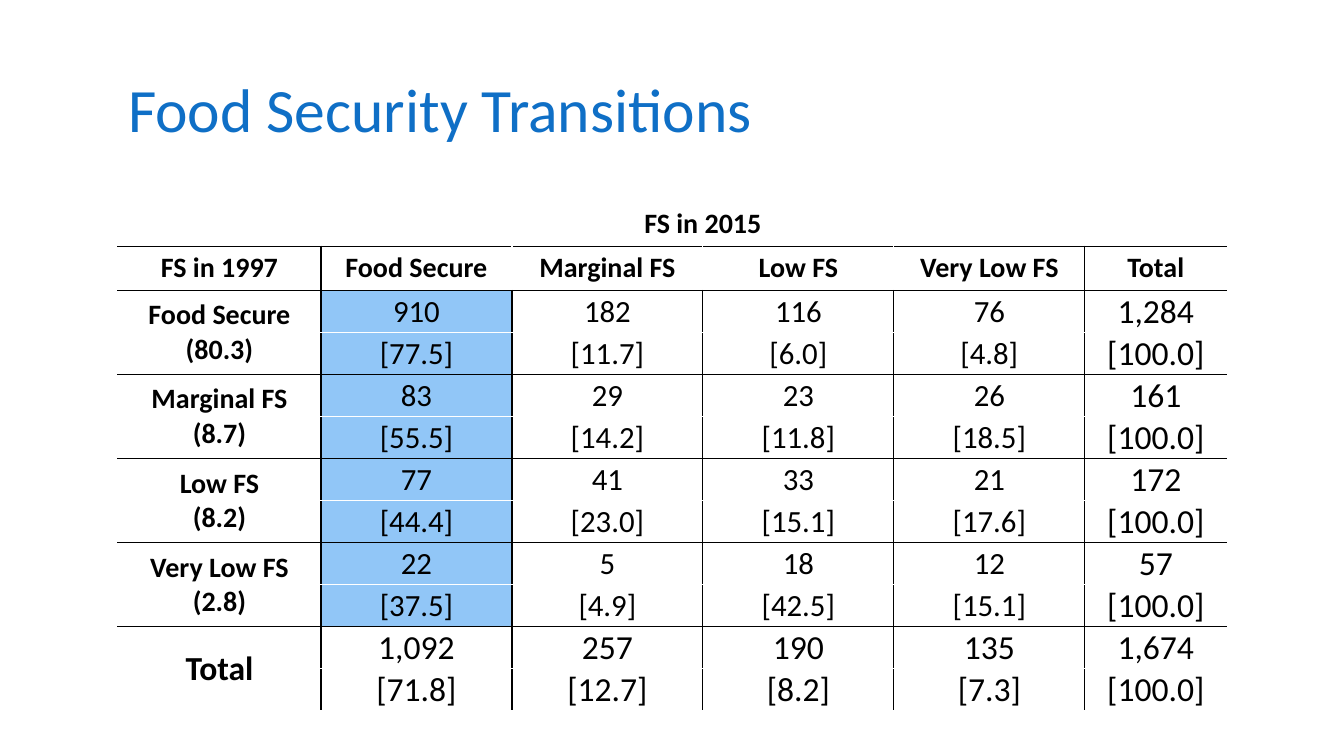
from dataclasses import dataclass
from lxml.etree import SubElement
from pptx import Presentation
from pptx.dml.color import RGBColor
from pptx.enum.text import MSO_ANCHOR, PP_ALIGN
from pptx.oxml.ns import qn
from pptx.util import Pt

TITLE = "Food Security Transitions"
YEAR_HEADING = "FS in 2015"
HEADINGS = ["FS in 1997", "Food Secure", "Marginal FS", "Low FS", "Very Low FS", "Total"]
GROUPS = [
    (("Food Secure", "(80.3)"),
     ["910", "182", "116", "76", "1,284"],
     ["[77.5]", "[11.7]", "[6.0]", "[4.8]", "[100.0]"]),
    (("Marginal FS", "(8.7)"),
     ["83", "29", "23", "26", "161"],
     ["[55.5]", "[14.2]", "[11.8]", "[18.5]", "[100.0]"]),
    (("Low FS", "(8.2)"),
     ["77", "41", "33", "21", "172"],
     ["[44.4]", "[23.0]", "[15.1]", "[17.6]", "[100.0]"]),
    (("Very Low FS", "(2.8)"),
     ["22", "5", "18", "12", "57"],
     ["[37.5]", "[4.9]", "[42.5]", "[15.1]", "[100.0]"]),
    (("Total", ""),
     ["1,092", "257", "190", "135", "1,674"],
     ["[71.8]", "[12.7]", "[8.2]", "[7.3]", "[100.0]"]),
]


@dataclass(frozen=True)
class Theme:
    font: str = "Calibri"
    title: str = "0F6FC6"
    ink: str = "000000"
    paper: str = "FFFFFF"
    highlight: str = "91C6F7"
    title_size: int = 44
    label_size: int = 20
    value_size: int = 22
    total_size: int = 24
    rule: int = 1


THEME = Theme()
EMU_PER_PX = 914400 / 100.8
SLIDE_SIZE = (1344, 756)
TITLE_BOX = (118, 40, 1109, 146)
TABLE_ORIGIN = (118, 202)
COLUMN_WIDTHS = [203, 191, 191, 191, 191, 142]
HEADER_HEIGHT, VALUE_HEIGHT = 44, 42
HEADER_ROWS = 2
HEADER_INSETS, LABEL_INSETS, VALUE_INSETS = (10, 5, 10, 5), (0, 0, 0, 0), (1, 1, 1, 0)

ROWS = [["", YEAR_HEADING, "", "", "", ""], HEADINGS]
for labels, counts, shares in GROUPS:
    ROWS += [[labels[0], *counts], [labels[1], *shares]]
LAST_ROW, LAST_COLUMN = len(ROWS) - 1, len(HEADINGS) - 1
TOTAL_ROW = LAST_ROW - 1


def px(length):
    return round(length * EMU_PER_PX)


def apply(target, formats):
    for attribute, value in formats.items():
        setattr(target, attribute, value)


def write(paragraph, text, size, color, bold, align):
    paragraph.text = text
    paragraph.alignment = align
    apply(paragraph.font, {"name": THEME.font, "size": Pt(size), "bold": bold})
    paragraph.font.color.rgb = RGBColor.from_string(color)


def horizontal_rule(row):
    closes_pair = row >= 0 and (row < HEADER_ROWS or row % 2 == 1)
    return THEME.ink if closes_pair and row < LAST_ROW else THEME.paper


def vertical_rule(row, column):
    inside = 0 <= column < LAST_COLUMN
    drawn = row >= HEADER_ROWS or (row == 1 and column in (0, LAST_COLUMN - 1))
    return THEME.ink if inside and drawn else THEME.paper


def draw_borders(cell, row, column):
    sides = {"L": vertical_rule(row, column - 1), "R": vertical_rule(row, column),
             "T": horizontal_rule(row - 1), "B": horizontal_rule(row)}
    properties = cell._tc.get_or_add_tcPr()
    for side, color in sides.items():
        line = SubElement(properties, qn(f"a:ln{side}"), w=str(Pt(THEME.rule)))
        SubElement(SubElement(line, qn("a:solidFill")), qn("a:srgbClr"), val=color)


def cell_look(row, column):
    if row < HEADER_ROWS:
        return THEME.label_size, True, HEADER_INSETS, MSO_ANCHOR.MIDDLE
    if column == 0:
        if row >= TOTAL_ROW:
            return THEME.total_size, True, HEADER_INSETS, MSO_ANCHOR.MIDDLE
        anchor = MSO_ANCHOR.TOP if row % 2 else MSO_ANCHOR.BOTTOM
        return THEME.label_size, True, LABEL_INSETS, anchor
    in_total = row >= TOTAL_ROW or column == LAST_COLUMN
    size = THEME.total_size if in_total else THEME.value_size
    return size, False, VALUE_INSETS, MSO_ANCHOR.MIDDLE


def fill_cell(cell, row, column, text):
    size, bold, insets, anchor = cell_look(row, column)
    left, top, right, bottom = map(px, insets)
    apply(cell, {"margin_left": left, "margin_top": top, "margin_right": right,
                 "margin_bottom": bottom, "vertical_anchor": anchor})
    write(cell.text_frame.paragraphs[0], text, size, THEME.ink, bold, PP_ALIGN.CENTER)
    draw_borders(cell, row, column)
    highlighted = column == 1 and HEADER_ROWS <= row < TOTAL_ROW
    cell.fill.solid()
    cell.fill.fore_color.rgb = RGBColor.from_string(
        THEME.highlight if highlighted else THEME.paper)


def add_title(slide):
    title = slide.shapes.title
    apply(title, dict(zip(("left", "top", "width", "height"), map(px, TITLE_BOX))))
    apply(title.text_frame, {"vertical_anchor": MSO_ANCHOR.MIDDLE, "word_wrap": True})
    heading = title.text_frame.paragraphs[0]
    write(heading, TITLE, THEME.title_size, THEME.title, False, PP_ALIGN.LEFT)
    heading.line_spacing = 0.9


def add_transitions(slide):
    heights = [HEADER_HEIGHT if row < HEADER_ROWS else VALUE_HEIGHT for row in range(len(ROWS))]
    transitions = slide.shapes.add_table(
        len(ROWS), len(HEADINGS), *map(px, TABLE_ORIGIN),
        px(sum(COLUMN_WIDTHS)), px(sum(heights))).table
    apply(transitions, {"first_row": False, "horz_banding": False})
    for column, width in zip(transitions.columns, COLUMN_WIDTHS):
        column.width = px(width)
    for row, height in zip(transitions.rows, heights):
        row.height = px(height)
    for row, texts in enumerate(ROWS):
        for column, text in enumerate(texts):
            fill_cell(transitions.cell(row, column), row, column, text)
    transitions.cell(0, 1).merge(transitions.cell(0, LAST_COLUMN - 1))
    transitions.cell(TOTAL_ROW, 0).merge(transitions.cell(LAST_ROW, 0))


def main():
    deck = Presentation()
    apply(deck, dict(zip(("slide_width", "slide_height"), map(px, SLIDE_SIZE))))
    slide = deck.slides.add_slide(deck.slide_layouts[5])
    add_title(slide)
    add_transitions(slide)
    deck.save("out.pptx")


if __name__ == "__main__":
    main()
